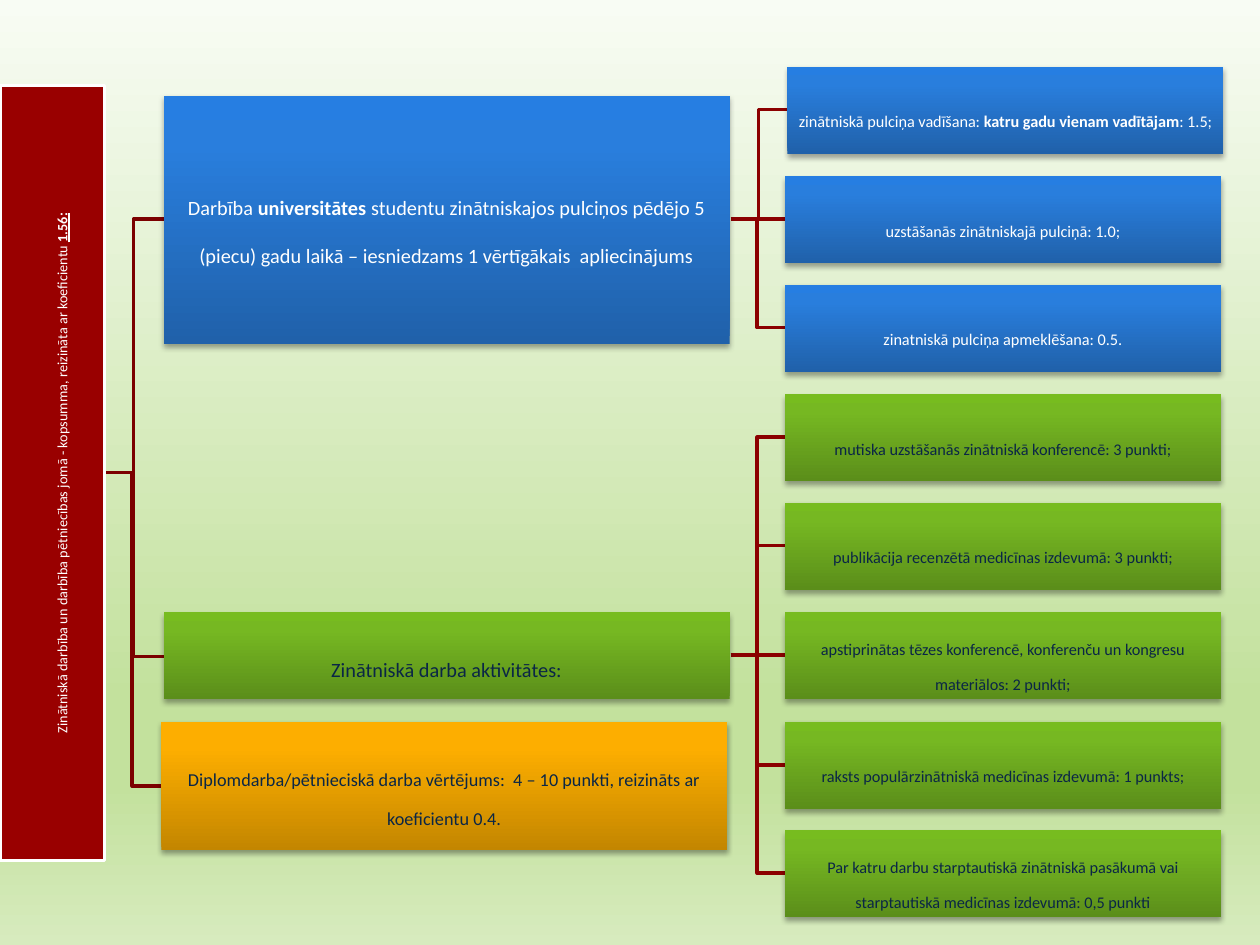
from dataclasses import dataclass

from lxml import etree
from pptx import Presentation
from pptx import util as u
from pptx.dml.color import RGBColor
from pptx.enum import shapes, text
from pptx.oxml import ns

PX = 9144


@dataclass(frozen=True)
class Theme:
    font: str = "Calibri"
    back: tuple = ((0, "F8FCF4"), (74, "C3E19D"), (83, "C3E19D"), (100, "D7EBBE"))
    blue: tuple = ((0, "2061AA"), (80, "297EDD"), (100, "267EE2"))
    green: tuple = ((0, "5B8E1A"), (80, "76B822"), (100, "77BC1F"))
    gold: tuple = ((0, "C38600"), (80, "FDAE00"), (100, "FEAE00"))
    red: str = "990000"
    white: str = "FFFFFF"
    navy: str = "0A2646"
    trunk: str = "7B0000"
    twig: str = "8B0000"
    shade: str = "000000"
    root: int = 14
    leaf: int = 16
    note: int = 18
    head: int = 20
    line: int = 2


def assign(item, values):
    for name, value in values.items():
        setattr(item, name, value)


def add(parent, tag, **values):
    node = etree.SubElement(parent, ns.qn(tag))
    for name, value in values.items():
        node.set(name, str(value))
    return node


class Chart:
    def __init__(self, slide, theme):
        self.slide = slide
        self.theme = theme

    def blend(self, fill, owner, stops, angle):
        fill.gradient()
        fill.gradient_angle = angle
        node = owner.find(".//" + ns.qn("a:gsLst"))
        for old in list(node):
            node.remove(old)
        for place, color in stops:
            stop = add(node, "a:gs", pos=place * 1000)
            add(stop, "a:srgbClr", val=color)

    def back(self):
        self.blend(self.slide.background.fill, self.slide.element, self.theme.back, 270)

    def shade(self, shape):
        node = shape.element.spPr.find(ns.qn("a:effectLst"))
        drop = add(node, "a:outerShdw", blurRad=u.Pt(3.1), dist=u.Pt(1.8),
                   dir=5400000, rotWithShape=0)
        color = add(drop, "a:srgbClr", val=self.theme.shade)
        add(color, "a:alpha", val=35000)

    def stroke(self, shape, color):
        shape.line.color.rgb = RGBColor.from_string(color)
        shape.line.width = u.Pt(self.theme.line)

    def link(self, start, end, color):
        (x, y), (right, low) = start, end
        if y == low:
            shape = self.slide.shapes.add_connector(
                shapes.MSO_CONNECTOR.STRAIGHT, x * PX, y * PX, right * PX, low * PX)
            add(shape.element.spPr, "a:effectLst")
        else:
            mid = (x + right) // 2
            pen = self.slide.shapes.build_freeform(x, y, scale=PX)
            pen.add_line_segments([(mid, y), (mid, low), end], close=False)
            shape = pen.convert_to_shape()
            shape.fill.background()
            shape.shadow.inherit = False
        self.stroke(shape, color)

    def box(self, area, runs, size, ink, stops=None, space=0.9, turn=0):
        shape = self.slide.shapes.add_shape(
            shapes.MSO_SHAPE.RECTANGLE, *(n * PX for n in area))
        shape.shadow.inherit = False
        shape.rotation = turn
        if stops:
            self.blend(shape.fill, shape.element, stops, 90)
            shape.line.fill.background()
            self.shade(shape)
        else:
            shape.fill.solid()
            shape.fill.fore_color.rgb = RGBColor.from_string(self.theme.red)
            self.stroke(shape, self.theme.white)
        self.label(shape.text_frame, runs, size, ink, space)

    def label(self, frame, runs, size, ink, space):
        sides = ("left", "right", "top", "bottom")
        assign(frame, {"margin_" + side: PX for side in sides})
        assign(frame, dict(word_wrap=True, vertical_anchor=text.MSO_ANCHOR.MIDDLE))
        para = frame.paragraphs[0]
        assign(para, dict(alignment=text.PP_ALIGN.CENTER, line_spacing=space,
                          space_after=u.Pt(round(size * 0.35, 1))))
        for words, style in runs:
            run = para.add_run()
            run.text = words
            base = dict(name=self.theme.font, size=u.Pt(size), bold=False)
            assign(run.font, base | style)
            run.font.color.rgb = RGBColor.from_string(ink)
            run.font._element.set("baseline", "-25000")


def plain(words):
    return [(words, {})]


BOLD = {"bold": True}
ROOT = [("Zinātniskā darbība un darbība pētniecības jomā - kopsumma, "
         "reizināta ar koeficientu ", {}),
        ("1.56:", {"bold": True, "underline": True})]
CLUB = [("Darbība ", {}), ("universitātes", BOLD),
        (" studentu zinātniskajos pulciņos pēdējo 5 (piecu) gadu laikā – "
         "iesniedzams 1 vērtīgākais  apliecinājums", {})]
WORK = plain("Zinātniskā darba aktivitātes:")
THESIS = plain("Diplomdarba/pētnieciskā darba vērtējums:  4 – 10 punkti, "
               "reizināts ar koeficientu 0.4.")
CLUBS = [
    [("zinātniskā pulciņa vadīšana: ", {}),
     ("katru gadu vienam vadītājam", BOLD), (": 1.5;", {})],
    plain("uzstāšanās zinātniskajā pulciņā: 1.0;"),
    plain("zinatniskā pulciņa apmeklēšana: 0.5."),
]
WORKS = [plain(words) for words in (
    "mutiska uzstāšanās zinātniskā konferencē: 3 punkti;",
    "publikācija recenzētā medicīnas izdevumā: 3 punkti;",
    "apstiprinātas tēzes konferencē, konferenču un kongresu materiālos: 2 punkti;",
    "raksts populārzinātniskā medicīnas izdevumā: 1 punkts;",
    "Par katru darbu starptautiskā zinātniskā pasākumā vai starptautiskā "
    "medicīnas izdevumā: 0,5 punkti",
)]


def main():
    deck = Presentation()
    assign(deck, dict(slide_width=1000 * PX, slide_height=750 * PX))
    theme = Theme()
    chart = Chart(deck.slides.add_slide(deck.slide_layouts[6]), theme)
    chart.back()

    wide, tall, step = 346, 69, 86.6
    leaves = []
    for i, runs in enumerate(CLUBS + WORKS):
        club = i < len(CLUBS)
        left, top = 623 if i else 625, round(53 + i * step)
        leaves.append((left, top, runs, club))

    for end in ((128, 624), (130, 521), (130, 174)):
        chart.link((83, 375), end, theme.trunk)
    for left, top, runs, club in leaves:
        hub = leaves[1 if club else 5][1] + tall // 2
        chart.link((580, hub), (left, top + tall // 2), theme.twig)

    chart.box((-266, 334, 615, 83), ROOT, theme.root, theme.white, turn=270)
    chart.box((130, 76, 449, 197), CLUB, theme.head, theme.white, theme.blue, space=1.0)
    chart.box((130, 486, 449, tall), WORK, theme.head, theme.navy, theme.green)
    chart.box((128, 573, 449, 102), THESIS, theme.note, theme.navy, theme.gold)
    for left, top, runs, club in leaves:
        ink, stops = (theme.white, theme.blue) if club else (theme.navy, theme.green)
        chart.box((left, top, wide, tall), runs, theme.leaf, ink, stops)

    deck.save("out.pptx")


if __name__ == "__main__":
    main()
